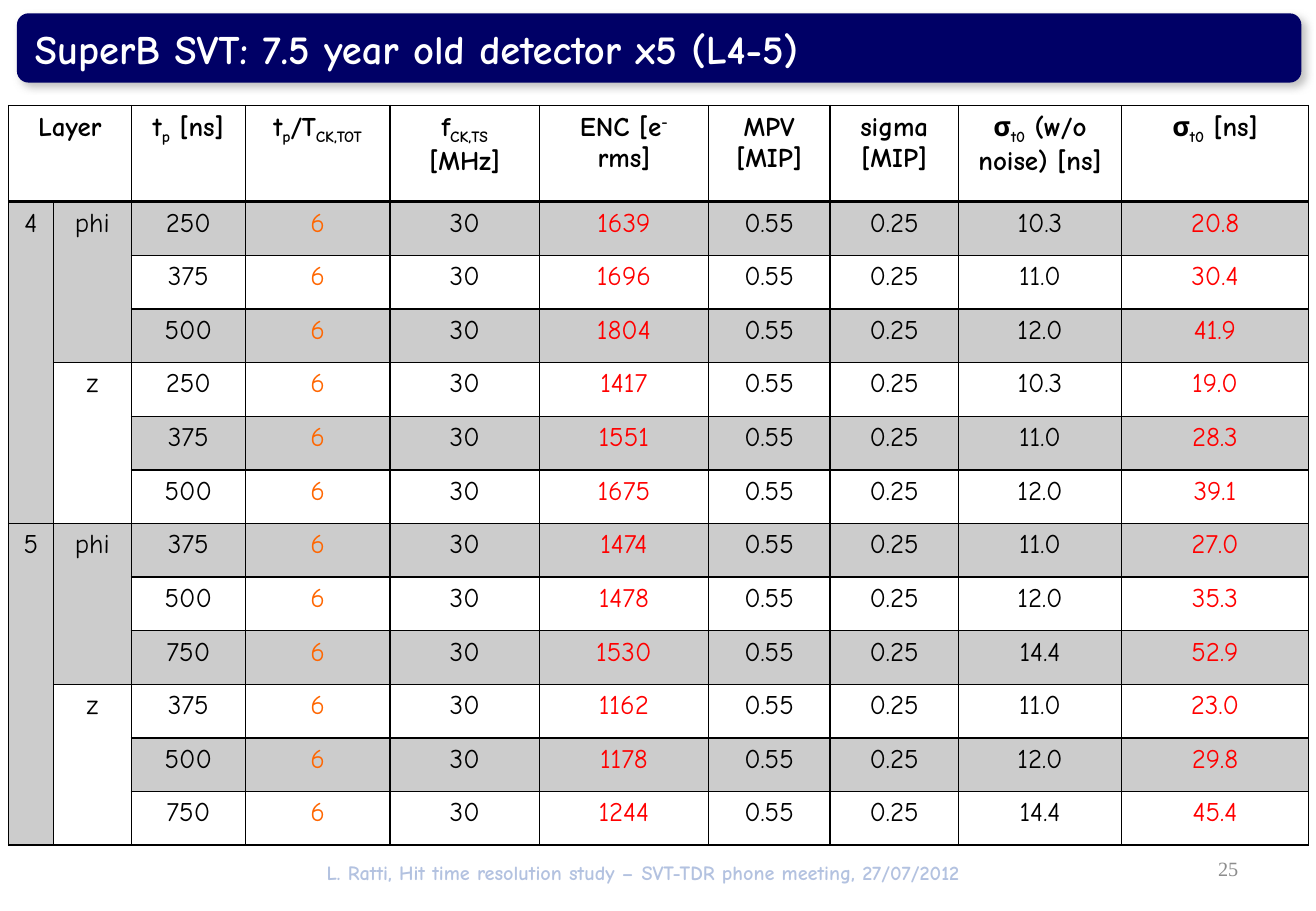
from lxml.etree import SubElement
from pptx import Presentation
from pptx.dml.color import RGBColor
from pptx.enum.shapes import MSO_SHAPE
from pptx.enum.text import MSO_ANCHOR, PP_ALIGN
from pptx.oxml.ns import qn
from pptx.util import Inches, Pt

TITLE = "SuperB SVT: 7.5 year old detector x5 (L4-5)"
FOOTER = "L. Ratti, Hit time resolution study – SVT-TDR phone meeting, 27/07/2012"
PAGE = "25"
SUB, SUP = -25000, 30000
HEADER = [
    [("Layer", 0)],
    [],
    [("t", 0), ("p", SUB), (" [ns]", 0)],
    [("t", 0), ("p", SUB), ("/T", 0), ("CK,TOT", SUB)],
    [("f", 0), ("CK,TS", SUB), (" [MHz]", 0)],
    [("ENC [e", 0), ("- ", SUP), ("rms]", 0)],
    [("MPV [MIP]", 0)],
    [("sigma [MIP]", 0)],
    [("σ", 0), ("t0", SUB), (" (w/o noise) [ns]", 0)],
    [("σ", 0), ("t0", SUB), (" [ns]", 0)],
]
BLOCKS = [
    ("4", "phi", [("250", "1639", "20.8"), ("375", "1696", "30.4"), ("500", "1804", "41.9")]),
    ("4", "z", [("250", "1417", "19.0"), ("375", "1551", "28.3"), ("500", "1675", "39.1")]),
    ("5", "phi", [("375", "1474", "27.0"), ("500", "1478", "35.3"), ("750", "1530", "52.9")]),
    ("5", "z", [("375", "1162", "23.0"), ("500", "1178", "29.8"), ("750", "1244", "45.4")]),
]
NOISELESS = {"250": "10.3", "375": "11.0", "500": "12.0", "750": "14.4"}
RATIO, CLOCK, MPV, SIGMA = "6", "30", "0.55", "0.25"
COLUMN_COLORS = {3: "FF6600", 5: "FF0000", 9: "FF0000"}
COL_WIDTHS = [0.37, 0.64, 0.94, 1.19, 1.23, 1.39, 1, 1.06, 1.34, 1.54]
HEADER_SHARE = 0.13
COMIC = "Comic Neue"

AREAS = {
    "footer": (17.64, 93.73, 62.51, 4),
    "bar": (1.29, 1.47, 97.6, 7.6),
    "veil": (0.74, 85.87, 98.52, 13.33),
    "page": (71.65, 92.67, 23.36, 5.33),
    "table": (0.65, 11.6, 98.8, 81.2),
    "title": (1.75, 2, 93.72, 6.67),
}

prs = Presentation()
prs.slide_width, prs.slide_height = Inches(10.83), Inches(7.5)
s = prs.slides.add_slide(prs.slide_layouts[6])


def rgb(value):
    return RGBColor.from_string(value)


def area(place):
    sizes = (prs.slide_width, prs.slide_height) * 2
    return [int(share * size / 100) for share, size in zip(AREAS[place], sizes)]


def write(tf, runs, align, color, **formats):
    p = tf.paragraphs[0]
    p.alignment = align
    for text, baseline in runs:
        r = p.add_run()
        r.text = text
        r.font.color.rgb = rgb(color)
        for key, value in formats.items():
            setattr(r.font, key, value)
        if baseline:
            r._r.get_or_add_rPr().set("baseline", str(baseline))


def add_text(place, text, align, anchor, color, **formats):
    tf = s.shapes.add_textbox(*area(place)).text_frame
    tf.word_wrap = True
    tf.vertical_anchor = anchor
    write(tf, [(text, 0)], align, color, **formats)


def add_panel(place, shape, color):
    sp = s.shapes.add_shape(shape, *area(place))
    sp.shadow.inherit = False
    sp.fill.solid()
    sp.fill.fore_color.rgb = rgb(color)
    sp.line.fill.background()
    return sp


def set_alpha(color_element, percent):
    SubElement(color_element, qn("a:alpha"), val=str(percent * 1000))


def add_border(cell, side, points):
    ln = SubElement(cell._tc.get_or_add_tcPr(), qn("a:" + side), w=str(Pt(points)))
    SubElement(SubElement(ln, qn("a:solidFill")), qn("a:srgbClr"), val="000000")


def add_results():
    records = [
        [layer, side, tp, RATIO, CLOCK, enc, MPV, SIGMA, NOISELESS[tp], jitter]
        for layer, side, results in BLOCKS
        for tp, enc, jitter in results
    ]
    rows = [HEADER] + [[[(value, 0)] for value in record] for record in records]
    x, y, w, h = area("table")
    table = s.shapes.add_table(len(rows), len(COL_WIDTHS), x, y, w, h).table
    table.first_row = table.horz_banding = False
    for column, width in zip(table.columns, COL_WIDTHS):
        column.width = int(w * width / sum(COL_WIDTHS))
    header_height = int(h * HEADER_SHARE)
    for i, row in enumerate(table.rows):
        row.height = (h - header_height) // len(records) if i else header_height
    table.cell(0, 0).merge(table.cell(0, 1))
    for col, span in ((0, 6), (1, 3)):
        for top in range(1, len(rows), span):
            table.cell(top, col).merge(table.cell(top + span - 1, col))
    for i, row in enumerate(rows):
        for j, runs in enumerate(row):
            cell = table.cell(i, j)
            for side in ("lnL", "lnR", "lnT", "lnB"):
                thick = (i, side) in ((0, "lnB"), (1, "lnT"))
                add_border(cell, side, 2 if thick else 1)
            if i % 2:
                cell.fill.solid()
                cell.fill.fore_color.rgb = rgb("CCCCCC")
            else:
                cell.fill.background()
            if not cell.is_spanned:
                color = COLUMN_COLORS.get(j, "000000") if i else "000000"
                write(cell.text_frame, runs, PP_ALIGN.CENTER, color,
                      name=COMIC, size=Pt(16), bold=i == 0)


add_text("footer", FOOTER, PP_ALIGN.CENTER, MSO_ANCHOR.TOP, "003399",
         name=COMIC, size=Pt(12), bold=True)

bar = add_panel("bar", MSO_SHAPE.ROUNDED_RECTANGLE, "000066")
bar.adjustments[0] = 0.167
effects = bar._element.spPr.find(qn("a:effectLst"))
shadow = SubElement(effects, qn("a:outerShdw"), blurRad=str(Pt(5)), dist=str(Pt(3)),
                    dir="2700000", algn="tl", rotWithShape="0")
set_alpha(SubElement(shadow, qn("a:srgbClr"), val="808080"), 50)

veil = add_panel("veil", MSO_SHAPE.RECTANGLE, "FFFFFF")
set_alpha(veil._element.spPr.find(".//" + qn("a:srgbClr")), 70)

add_text("page", PAGE, PP_ALIGN.RIGHT, MSO_ANCHOR.MIDDLE, "8C8C8C",
         name="Times New Roman", size=Pt(12))
add_results()
add_text("title", TITLE, PP_ALIGN.LEFT, MSO_ANCHOR.TOP, "FFFFFF",
         name=COMIC, size=Pt(24), bold=True)

prs.save("out.pptx")
